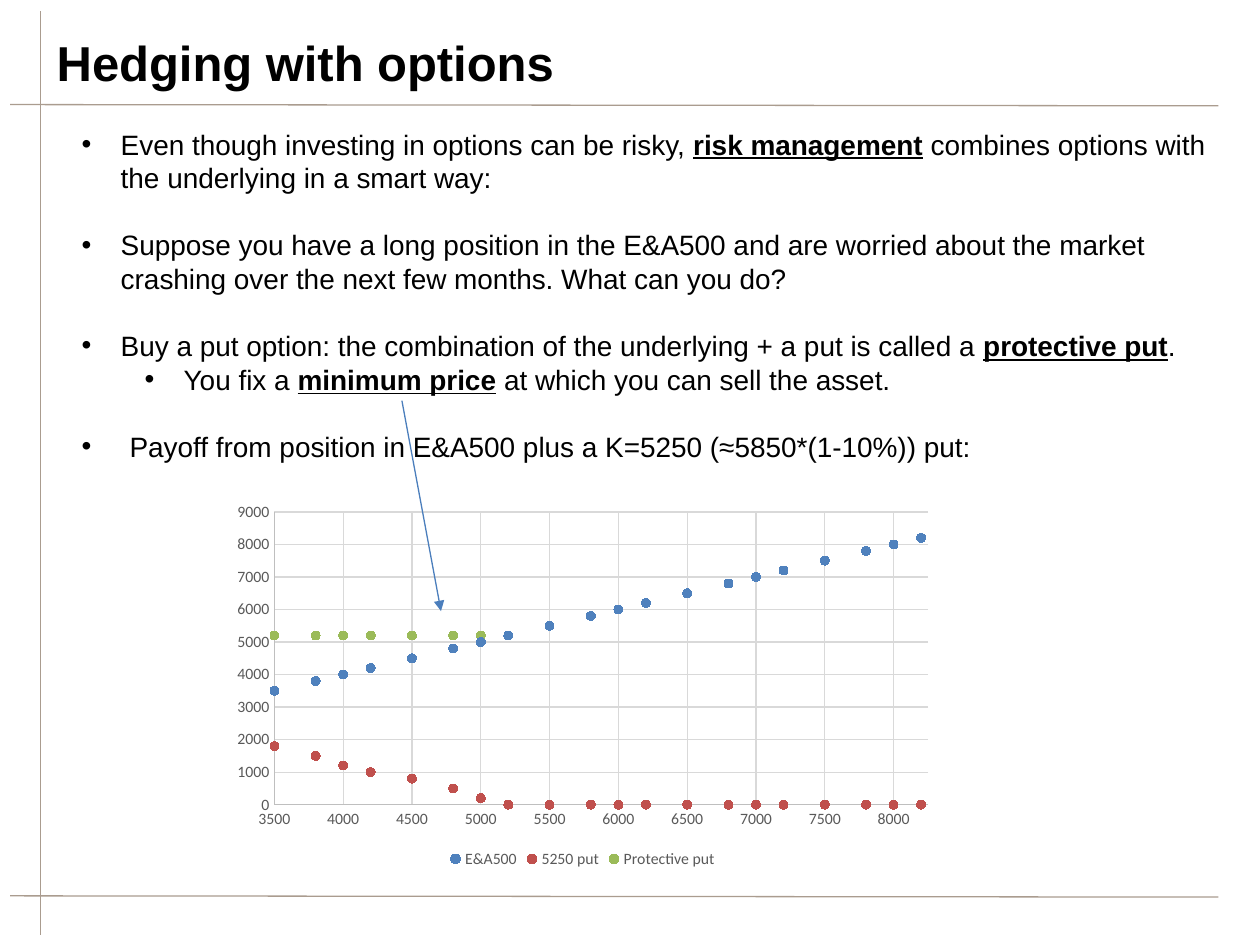
import pptx
import pptx.chart.data
import pptx.dml.color
import pptx.enum.chart
import pptx.enum.shapes
import pptx.enum.text
import pptx.oxml
import pptx.oxml.ns
import pptx.util
from pptx.util import Inches

COLORS = {
    "text": "000000", "rule": "AA9C8F", "arrow": "4B7EBC", "label": "595959",
    "axis": "BFBFBF", "grid": "D9D9D9",
    "index": "4F81BD", "put": "C0504D", "protective": "9BBB59",
}


def rgb(name):
    return pptx.dml.color.RGBColor.from_string(COLORS[name])


def add_line(start, end, color):
    line = slide.shapes.add_connector(
        pptx.enum.shapes.MSO_CONNECTOR.STRAIGHT,
        Inches(start[0]), Inches(start[1]), Inches(end[0]), Inches(end[1]))
    line.line.color.rgb = rgb(color)
    line.line.width = pptx.util.Pt(0.75)
    properties = line._element.spPr
    properties.append(properties.makeelement(pptx.oxml.ns.qn("a:effectLst"), {}))
    return line


presentation = pptx.Presentation()
presentation.slide_width = Inches(10)
presentation.slide_height = Inches(7.5)
slide = presentation.slides.add_slide(presentation.slide_layouts[5])

add_line((0.32, 0.09), (0.32, 7.42), "rule")
add_line((0.08, 0.83), (9.67, 0.84), "rule")
add_line((0.08, 7.11), (9.67, 7.12), "rule")

title = slide.shapes.title
title.left, title.top = Inches(0.35), Inches(0.21)
title.width, title.height = Inches(9), Inches(0.57)
title.text_frame.auto_size = pptx.enum.text.MSO_AUTO_SIZE.NONE
title.text_frame.vertical_anchor = pptx.enum.text.MSO_ANCHOR.MIDDLE
paragraph = title.text_frame.paragraphs[0]
paragraph.alignment = pptx.enum.text.PP_ALIGN.LEFT
run = paragraph.add_run()
run.text = "Hedging with options"
run.font.name = "Arial"
run.font.size = pptx.util.Pt(28)
run.font.bold = True
run.font.color.rgb = rgb("text")

LINE_HEIGHT = 19.2
BULLETS = [
    (0, 0.31, 0.31, 0, ["Even though investing in options can be risky, ", "risk management",
                        " combines options with the underlying in a smart way:"]),
    (0, 0.31, 0.31, 1, ["Suppose you have a long position in the E&A500 and are worried about "
                        "the market crashing over the next few months. What can you do?"]),
    (0, 0.31, 0.31, 1, ["Buy a put option: the combination of the underlying + a put is called a ",
                        "protective put", "."]),
    (1, 0.81, 0.31, 0, ["You fix a ", "minimum price", " at which you can sell the asset."]),
    (0, 0.38, 0.38, 1, ["Payoff from position in E&A500 plus a K=5250 (≈5850*(1-10%)) put:"]),
]
body = slide.shapes.add_textbox(Inches(0.55), Inches(0.96), Inches(9.45), Inches(2.79))
body.text_frame.word_wrap = True
for number, (level, margin, hanging, gap_lines, parts) in enumerate(BULLETS):
    paragraph = body.text_frame.paragraphs[0] if number == 0 else body.text_frame.add_paragraph()
    paragraph.level = level
    paragraph.line_spacing = pptx.util.Pt(LINE_HEIGHT)
    paragraph.space_before = pptx.util.Pt(gap_lines * LINE_HEIGHT)
    properties = paragraph._p.get_or_add_pPr()
    properties.set("marL", str(Inches(margin)))
    properties.set("indent", str(-Inches(hanging)))
    for tag, attributes in (("a:buFont", {"typeface": "Arial"}), ("a:buChar", {"char": "•"})):
        properties.append(properties.makeelement(pptx.oxml.ns.qn(tag), attributes))
    for position, text in enumerate(parts):
        run = paragraph.add_run()
        run.text = text
        run.font.name = "Arial"
        run.font.size = pptx.util.Pt(16)
        run.font.color.rgb = rgb("text")
        if position == 1:
            run.font.bold = True
            run.font.underline = True

STRIKE = 5250
prices = range(3500, 8251, 250)
payoffs = [
    ("E&A500", "index", lambda price: price),
    ("5250 put", "put", lambda price: max(STRIKE - price, 0)),
    ("Protective put", "protective", lambda price: max(STRIKE, price)),
]
chart_data = pptx.chart.data.XyChartData()
for name, color, payoff in payoffs:
    points = chart_data.add_series(name)
    for price in prices:
        points.add_data_point(round(price, -2), round(payoff(price), -2))
chart = slide.shapes.add_chart(
    pptx.enum.chart.XL_CHART_TYPE.XY_SCATTER,
    Inches(1.77), Inches(3.93), Inches(5.71), Inches(3), chart_data).chart
chart.has_title = False
chart.font.name = "Calibri"
chart.font.size = pptx.util.Pt(10)
chart.font.color.rgb = rgb("text")
chart.has_legend = True
chart.legend.position = pptx.enum.chart.XL_LEGEND_POSITION.BOTTOM
chart.legend.include_in_layout = False
chart.plots[0].vary_by_categories = False

for series, (name, color, payoff) in zip(chart.plots[0].series, payoffs):
    series.smooth = False
    series.format.line.fill.background()
    series.marker.style = pptx.enum.chart.XL_MARKER_STYLE.CIRCLE
    series.marker.size = 5
    series.marker.format.fill.solid()
    series.marker.format.fill.fore_color.rgb = rgb(color)
    series.marker.format.line.color.rgb = rgb(color)

for axis, low, high, step in ((chart.category_axis, 3500, 8250, 500),
                              (chart.value_axis, 0, 9000, 1000)):
    axis.minimum_scale, axis.maximum_scale, axis.major_unit = low, high, step
    axis.major_tick_mark = pptx.enum.chart.XL_TICK_MARK.NONE
    axis.minor_tick_mark = pptx.enum.chart.XL_TICK_MARK.NONE
    axis.has_major_gridlines = True
    axis.tick_labels.number_format = "General"
    axis.tick_labels.number_format_is_linked = False
    for line, color in ((axis.format.line, "axis"), (axis.major_gridlines.format.line, "grid")):
        line.color.rgb = rgb(color)
        line.width = pptx.util.Pt(0.75)

for font in (chart.legend.font, chart.category_axis.tick_labels.font,
             chart.value_axis.tick_labels.font):
    font.name = "Calibri"
    font.size = pptx.util.Pt(9)
    font.color.rgb = rgb("label")

arrow = add_line((3.19, 3.18), (3.5, 4.85), "arrow")
outline = arrow.line._get_or_add_ln()
outline.append(outline.makeelement(pptx.oxml.ns.qn("a:tailEnd"), {"type": "triangle"}))

presentation.save("out.pptx")
